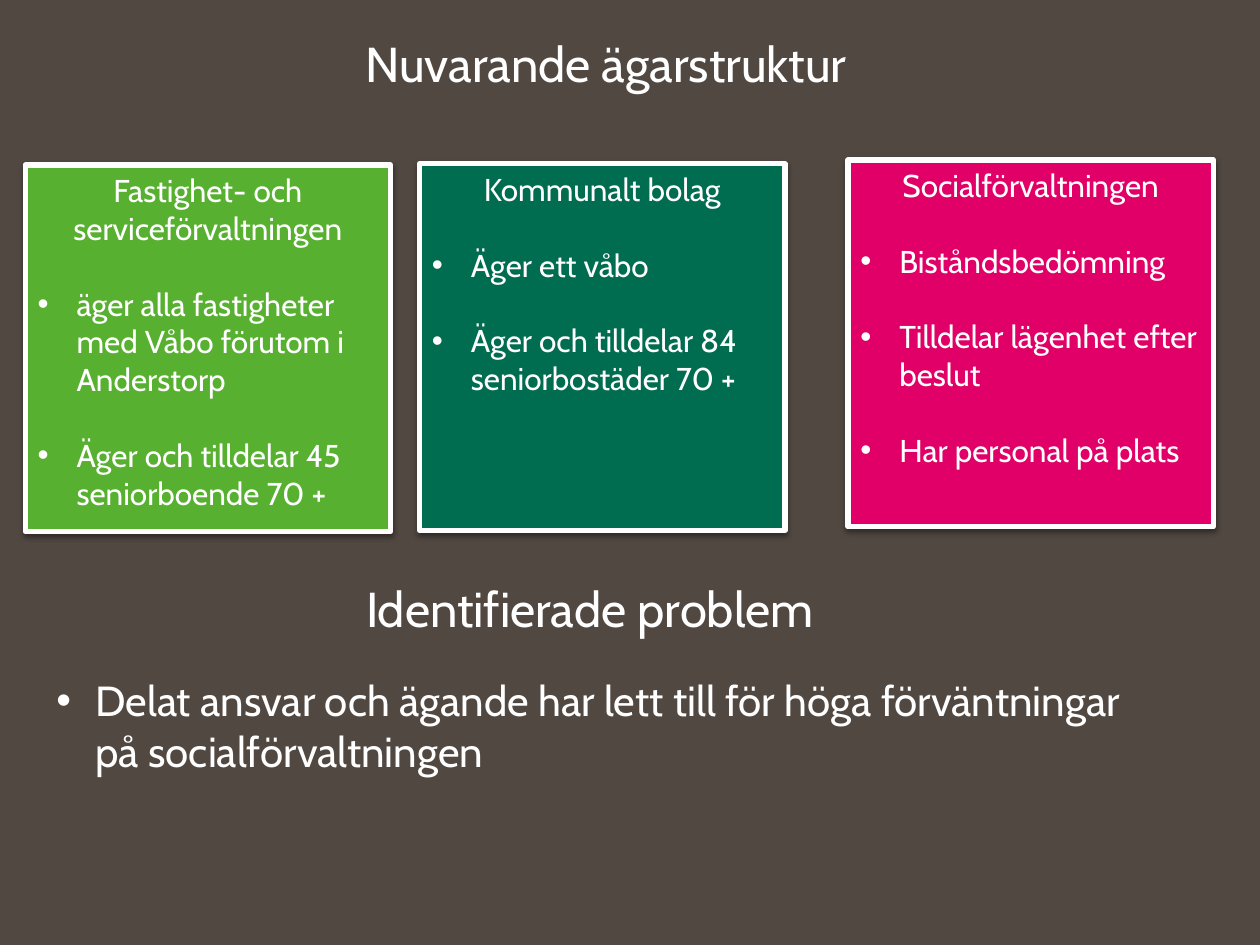
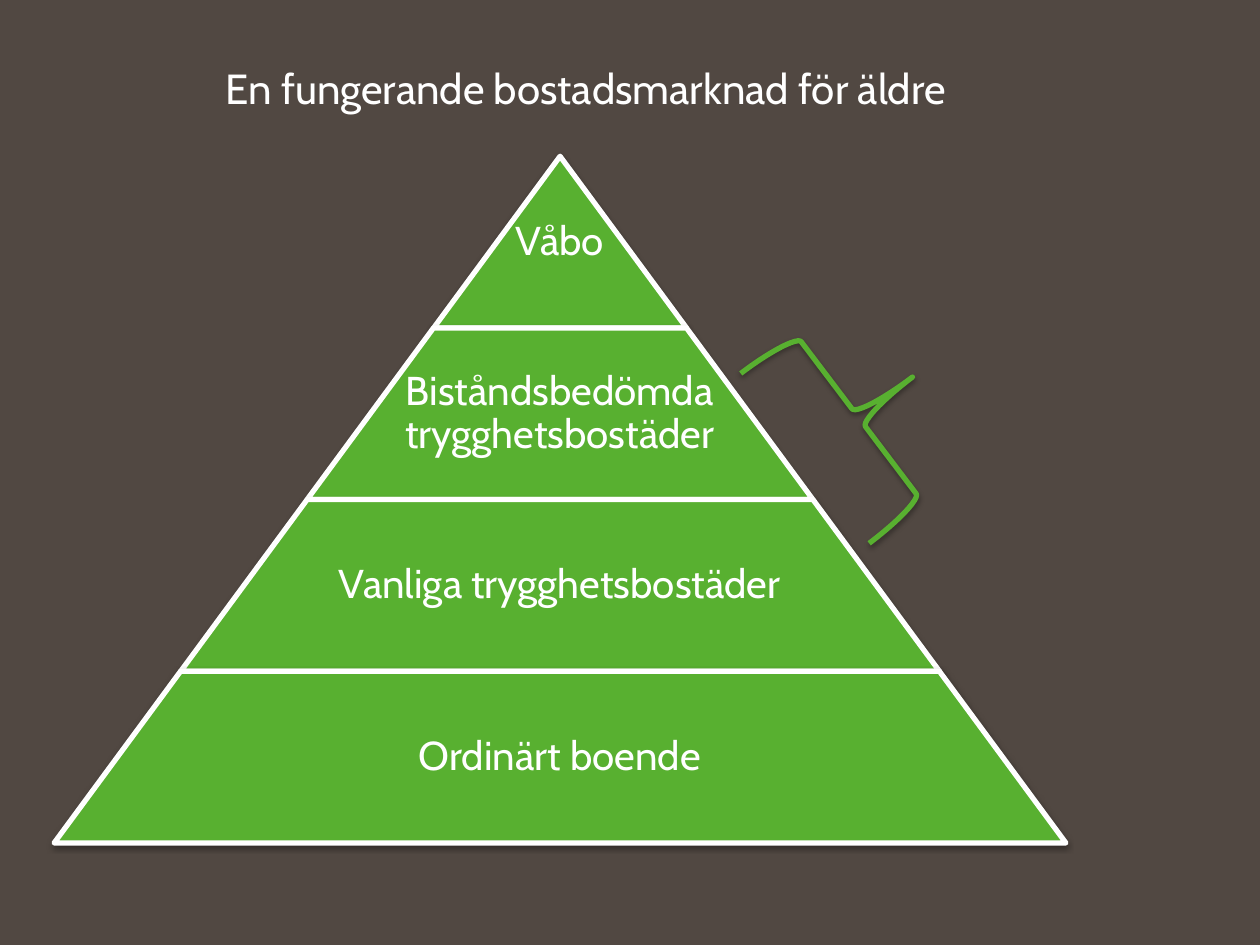
from lxml import etree
from pptx import Presentation
from pptx.dml.color import RGBColor
from pptx.enum import shapes, text
from pptx.oxml import ns
from pptx.util import Inches, Pt

BACKGROUND = RGBColor(0x51, 0x48, 0x42)
WHITE = RGBColor(0xFF, 0xFF, 0xFF)
GREEN = RGBColor(0x58, 0xB0, 0x30)
DARK_GREEN = RGBColor(0x00, 0x6C, 0x50)
PINK = RGBColor(0xE0, 0x00, 0x68)
FONT = "Cabin"
BULLET_INDENT = 0.31
CARD_SIZE = (2.9, 2.91)

OWNERS = [
    ((0.2, 1.31), GREEN, "Fastighet- och serviceförvaltningen",
     ["äger alla fastigheter med Våbo förutom i Anderstorp",
      "Äger och tilldelar 45 seniorboende 70 +"]),
    ((3.33, 1.3), DARK_GREEN, "Kommunalt bolag",
     ["Äger ett våbo", "Äger och tilldelar 84 seniorbostäder 70 +"]),
    ((6.73, 1.27), PINK, "Socialförvaltningen",
     ["Biståndsbedömning", "Tilldelar lägenhet efter beslut",
      "Har personal på plats"]),
]
TIERS = ["Våbo", "Biståndsbedömda trygghetsbostäder",
         "Vanliga trygghetsbostäder", "Ordinärt boende"]


def write(frame, words, size=18, align=text.PP_ALIGN.CENTER, bullet=False,
          before=0, line_spacing=None, first=False):
    paragraph = frame.paragraphs[0] if first else frame.add_paragraph()
    paragraph.alignment = align
    if bullet:
        properties = paragraph._p.get_or_add_pPr()
        properties.set("marL", str(Inches(BULLET_INDENT)))
        properties.set("indent", str(-Inches(BULLET_INDENT)))
        etree.SubElement(properties, ns.qn("a:buFont"), typeface="Arial")
        etree.SubElement(properties, ns.qn("a:buChar"), char="•")
    if before:
        paragraph.space_before = Pt(before)
    if line_spacing:
        paragraph.line_spacing = line_spacing
    run = paragraph.add_run()
    run.text = words
    run.font.name = FONT
    run.font.size = Pt(size)
    run.font.color.rgb = WHITE


def write_bullets(frame, items, size=18):
    for item in items:
        write(frame, item, size=size, align=text.PP_ALIGN.LEFT,
              bullet=True, before=21.6)


def style(shape, fill, line, opacity=38, distance=1.6):
    if fill is None:
        shape.fill.background()
    else:
        shape.fill.solid()
        shape.fill.fore_color.rgb = fill
    shape.line.color.rgb = line
    shape.line.width = Pt(3)
    shape.shadow.inherit = False
    effects = shape._element.spPr.find(ns.qn("a:effectLst"))
    shadow = etree.SubElement(
        effects, ns.qn("a:outerShdw"), blurRad=str(Pt(3.1)),
        dist=str(Pt(distance)), dir="5400000", rotWithShape="0")
    color = etree.SubElement(shadow, ns.qn("a:srgbClr"), val="000000")
    etree.SubElement(color, ns.qn("a:alpha"), val=str(opacity * 1000))


def add_text(slide, box, words, **formatting):
    frame = slide.shapes.add_textbox(*map(Inches, box)).text_frame
    frame.word_wrap = True
    frame.auto_size = text.MSO_AUTO_SIZE.SHAPE_TO_FIT_TEXT
    write(frame, words, first=True, **formatting)
    return frame


def add_owner_card(slide, box, color, owner, duties):
    card = slide.shapes.add_shape(shapes.MSO_SHAPE.RECTANGLE, *map(Inches, box))
    style(card, color, WHITE)
    frame = card.text_frame
    frame.word_wrap = True
    frame.vertical_anchor = text.MSO_ANCHOR.TOP
    write(frame, owner, first=True)
    write_bullets(frame, duties)


def add_pyramid(slide, box, labels):
    left, top, width, height = box
    center = left + width / 2
    tier_height = height / len(labels)
    half_step = width / 2 / len(labels)
    for level, label in enumerate(labels):
        upper = top + level * tier_height
        lower = upper + tier_height
        inner, outer = level * half_step, (level + 1) * half_step
        corners = [(center - outer, lower), (center - inner, upper),
                   (center + inner, upper), (center + outer, lower)]
        start, *others = [tuple(map(Inches, corner)) for corner in corners]
        outline = slide.shapes.build_freeform(*start)
        outline.add_line_segments(others, close=True)
        tier = outline.convert_to_shape()
        style(tier, GREEN, WHITE)
        frame = tier.text_frame
        frame.word_wrap = True
        frame.vertical_anchor = text.MSO_ANCHOR.MIDDLE
        frame.margin_top = frame.margin_bottom = Inches(0.03)
        side = 0.37 + 0.33 * level if level else 0.03
        frame.margin_left = frame.margin_right = Inches(side)
        write(frame, label, size=23, line_spacing=0.9, first=True)


def add_brace(slide, box, rotation):
    brace = slide.shapes.add_shape(shapes.MSO_SHAPE.RIGHT_BRACE, *map(Inches, box))
    brace.rotation = rotation
    style(brace, None, GREEN, opacity=35, distance=1.8)


def add_slide(deck):
    slide = deck.slides.add_slide(deck.slide_layouts[6])
    slide.background.fill.solid()
    slide.background.fill.fore_color.rgb = BACKGROUND
    return slide


def build_ownership(deck):
    slide = add_slide(deck)
    problems = add_text(slide, (0.35, 4.54, 8.66, 1.99),
                        "Identifierade problem", size=28)
    write_bullets(problems, ["Delat ansvar och ägande har lett till för höga "
                             "förväntningar på socialförvaltningen"], size=24)
    for position, color, owner, duties in OWNERS:
        add_owner_card(slide, position + CARD_SIZE, color, owner, duties)
    add_text(slide, (2.17, 0.22, 5.28, 0.57), "Nuvarande ägarstruktur", size=28)


def build_housing_market(deck):
    slide = add_slide(deck)
    add_pyramid(slide, (0.43, 1.24, 8.03, 5.45), TIERS)
    add_brace(slide, (6.28, 2.47, 1.07, 1.69), 322.9)
    add_text(slide, (1.69, 0.45, 6.4, 0.5),
             "En fungerande bostadsmarknad för äldre",
             size=24, align=text.PP_ALIGN.LEFT)


def main():
    deck = Presentation()
    deck.slide_width, deck.slide_height = Inches(10), Inches(7.5)
    build_ownership(deck)
    build_housing_market(deck)
    deck.save("out.pptx")


if __name__ == "__main__":
    main()
